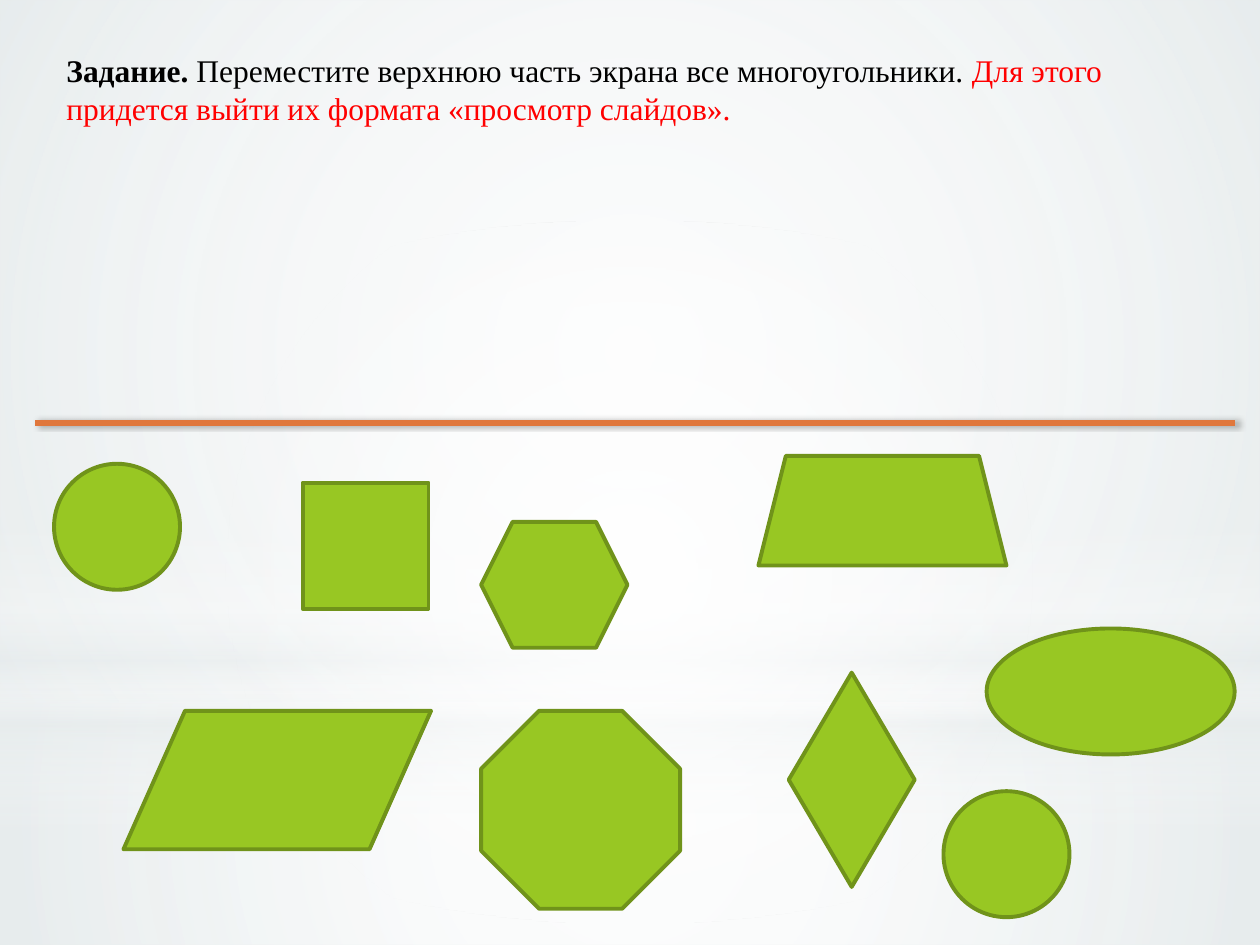
import pptx
import pptx.dml.color
import pptx.enum.shapes
import pptx.enum.text
import pptx.oxml
import pptx.oxml.ns
import pptx.util

Cm = pptx.util.Cm
Pt = pptx.util.Pt
Kind = pptx.enum.shapes.MSO_SHAPE
NAMESPACE = pptx.oxml.ns.nsdecls("a")


def colour(value):
    return pptx.dml.color.RGBColor.from_string(value)


class Sheet:
    font = "Times New Roman"
    text_size = 18
    fill = "98C723"
    outline = "70931A"
    outline_width = 2.25
    rule = "E0773C"
    rule_width = 3.25

    def __init__(self, page):
        self.page = page

    def background(self, value):
        fill = self.page.background.fill
        fill.solid()
        fill.fore_color.rgb = colour(value)

    def shape(self, kind, left, top, width, height):
        shape = self.page.shapes.add_shape(kind, Cm(left), Cm(top), Cm(width), Cm(height))
        shape.shadow.inherit = False
        return shape

    def figure(self, kind, *place):
        shape = self.shape(kind, *place)
        shape.fill.solid()
        shape.fill.fore_color.rgb = colour(self.fill)
        shape.line.color.rgb = colour(self.outline)
        shape.line.width = Pt(self.outline_width)

    def glow(self, kind, place, stops, radial=True):
        shape = self.shape(kind, *place)
        shape.line.fill.background()
        shape.fill.background()
        marks = "".join(
            f'<a:gs pos="{position * 1000}"><a:srgbClr val="{value}">'
            f'<a:alpha val="{opacity * 1000}"/></a:srgbClr></a:gs>'
            for position, value, opacity in stops
        )
        direction = (
            '<a:path path="circle"><a:fillToRect l="50000" t="50000" r="50000" b="50000"/></a:path>'
            if radial else '<a:lin ang="5400000" scaled="0"/>'
        )
        gradient = pptx.oxml.parse_xml(
            f'<a:gradFill {NAMESPACE} rotWithShape="1"><a:gsLst>{marks}</a:gsLst>{direction}</a:gradFill>'
        )
        properties = shape.element.spPr
        properties.replace(properties.find(pptx.oxml.ns.qn("a:noFill")), gradient)

    def divider(self, left, right, top):
        line = self.page.shapes.add_connector(
            pptx.enum.shapes.MSO_CONNECTOR.STRAIGHT, Cm(left), Cm(top), Cm(right), Cm(top)
        )
        line.line.color.rgb = colour(self.rule)
        line.line.width = Pt(self.rule_width)
        line.element.spPr.append(pptx.oxml.parse_xml(
            f'<a:effectLst {NAMESPACE}><a:outerShdw blurRad="{Pt(3.1)}" dist="{Pt(1.8)}" dir="0" '
            'rotWithShape="0"><a:srgbClr val="000000"><a:alpha val="40000"/></a:srgbClr>'
            '</a:outerShdw></a:effectLst>'
        ))

    def text(self, left, top, width, height, spans):
        box = self.page.shapes.add_textbox(Cm(left), Cm(top), Cm(width), Cm(height))
        box.text_frame.word_wrap = True
        box.text_frame.auto_size = pptx.enum.text.MSO_AUTO_SIZE.SHAPE_TO_FIT_TEXT
        para = box.text_frame.paragraphs[0]
        for words, value, bold in spans:
            span = para.add_run()
            span.text = words
            span.font.name = self.font
            span.font.size = Pt(self.text_size)
            span.font.bold = bold
            span.font.color.rgb = colour(value)


def main():
    deck = pptx.Presentation()
    deck.slide_width, deck.slide_height = Cm(25.4), Cm(19.05)
    sheet = Sheet(deck.slides.add_slide(deck.slide_layouts[6]))
    white, mist = "FFFFFF", "E7ECED"

    sheet.background(mist)
    sheet.glow(Kind.RECTANGLE, (0, 14.17, 25.4, 4.88),
               [(0, white, 91), (37, white, 76), (100, mist, 79)])
    sheet.glow(Kind.RECTANGLE, (0, 0, 25.4, 14.17),
               [(0, white, 89), (48, white, 62), (100, mist, 79)])
    sheet.glow(Kind.RECTANGLE, (0, 10.46, 25.4, 6.35),
               [(0, white, 0), (29, white, 30), (45, mist, 40),
                (55, white, 26), (65, mist, 60), (100, white, 0)], radial=False)
    sheet.glow(Kind.OVAL, (0, 4.45, 25.4, 14.17), [(0, white, 100), (56, white, 0)])

    sheet.divider(0.71, 24.89, 8.53)
    sheet.text(1.09, 0.91, 23.8, 1.8, [
        ("Задание. ", "000000", True),
        ("Переместите верхнюю часть экрана все многоугольники. ", "000000", False),
        ("Для этого придется выйти их формата «просмотр слайдов».", "FF0000", False),
    ])

    figures = [
        (Kind.OVAL, 1.09, 9.35, 2.54, 2.54),
        (Kind.FLOWCHART_DATA, 2.49, 14.33, 6.2, 2.79),
        (Kind.OVAL, 19.89, 12.67, 5, 2.54),
        (Kind.TRAPEZOID, 15.29, 9.19, 5, 2.21),
        (Kind.HEXAGON, 9.7, 10.52, 2.95, 2.54),
        (Kind.DIAMOND, 15.9, 13.56, 2.54, 4.32),
        (Kind.OCTAGON, 9.7, 14.33, 4.01, 3.99),
        (Kind.RECTANGLE, 6.1, 9.73, 2.54, 2.54),
        (Kind.OVAL, 19.02, 15.95, 2.54, 2.54),
    ]
    for kind, *place in figures:
        sheet.figure(kind, *place)

    deck.save("out.pptx")


if __name__ == "__main__":
    main()
